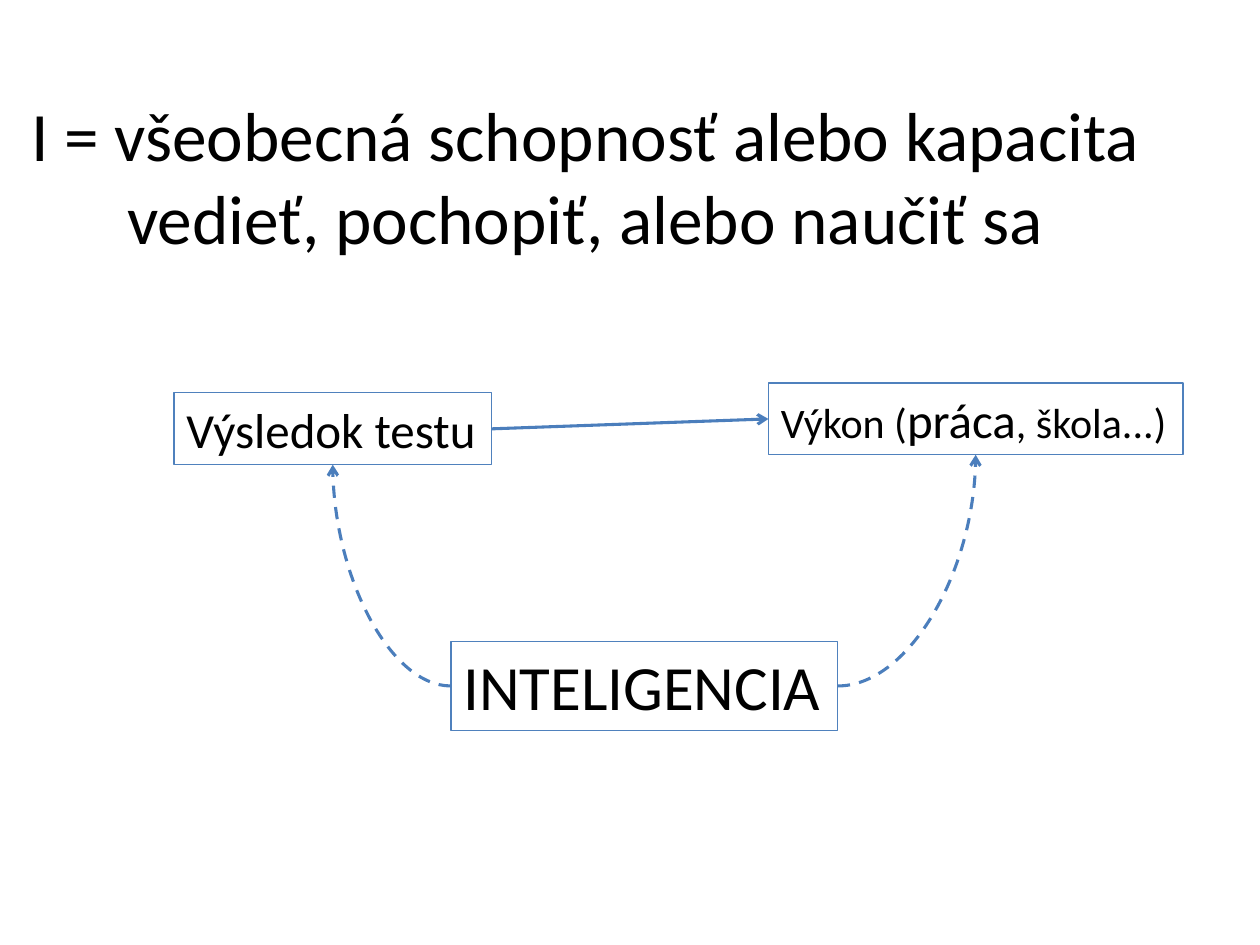
from lxml import etree
from pptx import Presentation
from pptx import util as u
from pptx.dml.color import RGBColor
from pptx.enum import dml, shapes, text
from pptx.oxml.ns import qn

BLACK = RGBColor(0x00, 0x00, 0x00)
BORDER = RGBColor(0x4F, 0x81, 0xBD)
ARROW = RGBColor(0x4B, 0x7E, 0xBC)
TOP, LEFT, BOTTOM, RIGHT = range(4)


def add_run(p, words, size=28, color=BLACK, font="Calibri"):
    r = p.add_run()
    r.text = words
    r.font.size = u.Pt(size)
    r.font.name = font
    r.font.color.rgb = color
    return r


def add_title(s, x, y, w, h):
    tf = s.shapes.add_textbox(u.Cm(x), u.Cm(y), u.Cm(w), u.Cm(h)).text_frame
    tf.word_wrap = True
    tf.vertical_anchor = text.MSO_ANCHOR.MIDDLE
    p = tf.paragraphs[0]
    p.alignment = text.PP_ALIGN.CENTER
    add_run(p, "I = všeobecná schopnosť alebo kapacita vedieť, pochopiť, alebo naučiť sa", size=39.6)


def add_box(s, x, y, w, h, runs):
    sp = s.shapes.add_shape(shapes.MSO_SHAPE.RECTANGLE, u.Cm(x), u.Cm(y), u.Cm(w), u.Cm(h))
    sp.shadow.inherit = False
    sp.fill.background()
    sp.line.color.rgb = BORDER
    sp.line.width = u.Pt(0.75)
    tf = sp.text_frame
    tf.word_wrap = False
    tf.auto_size = text.MSO_AUTO_SIZE.SHAPE_TO_FIT_TEXT
    tf.vertical_anchor = text.MSO_ANCHOR.TOP
    p = tf.paragraphs[0]
    p.alignment = text.PP_ALIGN.LEFT
    for words, size in runs:
        add_run(p, words, size=size)
    return sp


def add_arrow(s, start, start_side, end, end_side, curved=False):
    kind = shapes.MSO_CONNECTOR.CURVE if curved else shapes.MSO_CONNECTOR.STRAIGHT
    cxn = s.shapes.add_connector(kind, 0, 0, 0, 0)
    cxn.begin_connect(start, start_side)
    cxn.end_connect(end, end_side)
    cxn.line.color.rgb = ARROW
    cxn.line.width = u.Pt(1.75)
    props = cxn._element.spPr
    if curved:
        props.find(qn("a:prstGeom")).set("prst", "curvedConnector2")
        cxn.line.dash_style = dml.MSO_LINE.DASH
    etree.SubElement(props.find(qn("a:ln")), qn("a:tailEnd"), type="arrow")
    etree.SubElement(props, qn("a:effectLst"))


def add_diagram(s, x, y):
    result = add_box(s, x, y + 0.2, 6.4, 1.45, [("Výsledok testu", 28)])
    output = add_box(s, x + 11.98, y, 8.36, 1.45,
                     [("Výkon (", 24), ("práca", 28), (", škola...)", 24)])
    intelligence = add_box(s, x + 5.58, y + 5.21, 7.8, 1.8, [("INTELIGENCIA", 36)])
    add_arrow(s, result, RIGHT, output, LEFT)
    add_arrow(s, intelligence, RIGHT, output, BOTTOM, curved=True)
    add_arrow(s, intelligence, LEFT, result, BOTTOM, curved=True)


def main():
    prs = Presentation()
    prs.slide_width, prs.slide_height = u.Cm(25.4), u.Cm(19.05)
    s = prs.slides.add_slide(prs.slide_layouts[6])
    add_title(s, 0, 0.76, 23.6, 5.56)
    add_diagram(s, 3.51, 7.72)
    prs.save("out.pptx")


if __name__ == "__main__":
    main()
